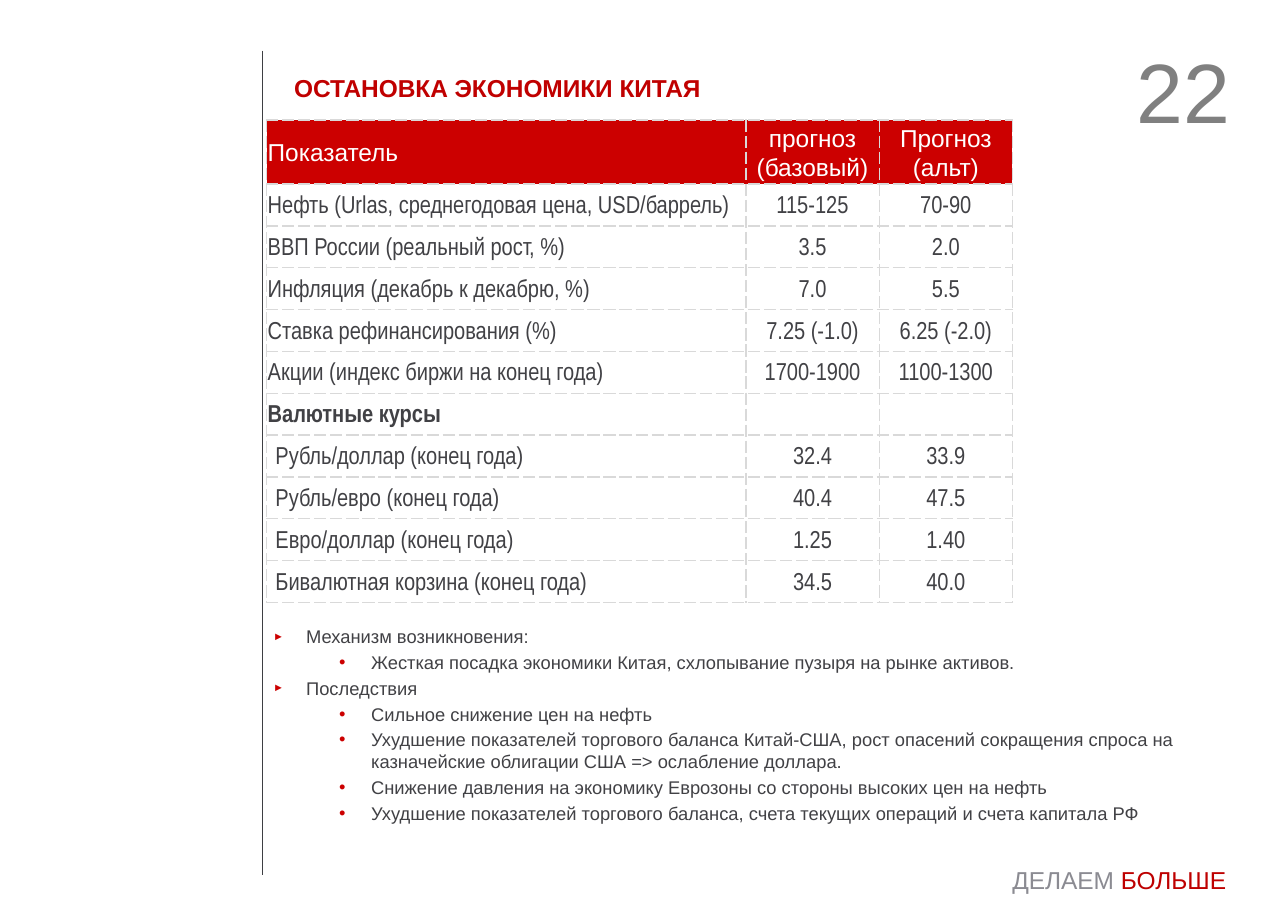
from lxml.etree import SubElement
from pptx import Presentation
from pptx.dml.color import RGBColor
from pptx.enum.shapes import MSO_CONNECTOR
from pptx.enum.text import MSO_ANCHOR, MSO_AUTO_SIZE, PP_ALIGN
from pptx.oxml import parse_xml
from pptx.oxml.ns import nsdecls, qn
from pptx.util import Inches, Pt

WHITE = RGBColor(0xFF, 0xFF, 0xFF)
INK = RGBColor(0x41, 0x41, 0x45)
RULE = RGBColor(0x3E, 0x3F, 0x43)
GREY = RGBColor(0x80, 0x80, 0x80)
MUTED = RGBColor(0x8B, 0x8B, 0x92)
PALE = RGBColor(0xD9, 0xD9, 0xD9)
RED = RGBColor(0xCC, 0x00, 0x00)
DEEP = RGBColor(0xC0, 0x00, 0x00)
BRAND = RGBColor(0xBE, 0x00, 0x00)

GROUP = "Валютные курсы"
HEAD = ("Показатель", "прогноз (базовый)", "Прогноз (альт)")
MACRO = [
    ("Нефть (Urlas, среднегодовая цена, USD/баррель)", "115-125", "70-90"),
    ("ВВП России (реальный рост, %)", "3.5", "2.0"),
    ("Инфляция (декабрь к декабрю, %)", "7.0", "5.5"),
    ("Ставка рефинансирования (%)", "7.25 (-1.0)", "6.25 (-2.0)"),
    ("Акции (индекс биржи на конец года)", "1700-1900", "1100-1300"),
]
RATES = [
    ("Рубль/доллар (конец года)", "32.4", "33.9"),
    ("Рубль/евро (конец года)", "40.4", "47.5"),
    ("Евро/доллар (конец года)", "1.25", "1.40"),
    ("Бивалютная корзина (конец года)", "34.5", "40.0"),
]
NOTES = [
    (0, "Механизм возникновения:"),
    (1, "Жесткая посадка экономики Китая, схлопывание пузыря на рынке активов."),
    (0, "Последствия"),
    (1, "Сильное снижение цен на нефть"),
    (1, "Ухудшение показателей торгового баланса Китай-США, рост опасений "
        "сокращения спроса на казначейские облигации США => ослабление доллара."),
    (1, "Снижение давления на экономику Еврозоны со стороны высоких цен на нефть"),
    (1, "Ухудшение показателей торгового баланса, счета текущих операций и счета капитала РФ"),
]
BULLETS = [("►", 60, 0.3, 0.3), ("•", 100, 0.89, 0.29)]


def grid(*units):
    """Turn grid columns or rows of a tenth of an inch into lengths."""
    return [Inches(unit / 10) for unit in units]


class Page:
    """Hold the style and the current slide."""

    def __init__(self, deck, font="Arial"):
        """Add a title-only slide to the deck."""
        self.slide = deck.slides.add_slide(deck.slide_layouts[5])
        self.font = font

    def style(self, para, size, color, bold=False, font=None):
        """Format every run of a paragraph."""
        for run in para.runs:
            run.font.name = font or self.font
            run.font.size = Pt(size)
            run.font.bold = bold
            run.font.color.rgb = color

    def title(self, text, box):
        """Fill and move the title placeholder."""
        shape = self.slide.shapes.title
        shape.left, shape.top, shape.width, shape.height = grid(*box)
        frame = shape.text_frame
        frame.text = text
        frame.auto_size = MSO_AUTO_SIZE.NONE
        frame.vertical_anchor = MSO_ANCHOR.MIDDLE
        frame.paragraphs[0].alignment = PP_ALIGN.LEFT
        self.style(frame.paragraphs[0], 16, DEEP, True)

    def text(self, text, box, size, color, align=PP_ALIGN.LEFT):
        """Add a wrapped text box and return its frame."""
        frame = self.slide.shapes.add_textbox(*grid(*box)).text_frame
        frame.word_wrap = True
        frame.text = text
        frame.paragraphs[0].alignment = align
        self.style(frame.paragraphs[0], size, color)
        return frame

    def line(self, start, end, color, width):
        """Draw a straight rule without a shadow."""
        rule = self.slide.shapes.add_connector(
            MSO_CONNECTOR.STRAIGHT, *grid(*start, *end))
        rule.line.color.rgb = color
        rule.line.width = Pt(width)
        SubElement(rule._element.spPr, qn("a:effectLst"))

    def bullets(self, items, box):
        """Add a two-level bulleted list."""
        frame = self.text("\n".join(text for _, text in items), box, 12, INK)
        for num, (para, (level, _)) in enumerate(zip(frame.paragraphs, items)):
            mark, size, left, hang = BULLETS[level]
            para.level = level
            props = para._p.get_or_add_pPr()
            props.set("marL", str(Inches(left)))
            props.set("indent", str(-Inches(hang)))
            color = SubElement(props, qn("a:buClr"))
            SubElement(color, qn("a:srgbClr"), val=str(RED))
            SubElement(props, qn("a:buSzPct"), val=str(size * 1000))
            SubElement(props, qn("a:buFont"), typeface=self.font)
            SubElement(props, qn("a:buChar"), char=mark)
            if num:
                para.space_before = Pt(2.4)
            self.style(para, 12, INK)

    def border(self, cell):
        """Give a cell dashed borders on all sides."""
        props = cell._tc.get_or_add_tcPr()
        for spot, side in enumerate("LRTB"):
            props.insert(spot, parse_xml(
                f'<a:ln{side} {nsdecls("a")} w="12700"><a:solidFill>'
                f'<a:srgbClr val="{PALE}"/></a:solidFill>'
                f'<a:prstDash val="dash"/></a:ln{side}>'))

    def cell(self, cell, text, head, col, inset):
        """Fill and format one table cell."""
        cell.margin_left = Inches(inset)
        cell.margin_top = cell.margin_right = Inches(0.01)
        cell.margin_bottom = 0
        cell.vertical_anchor = MSO_ANCHOR.MIDDLE
        cell.fill.solid()
        cell.fill.fore_color.rgb = RED if head else WHITE
        self.border(cell)
        cell.text = text
        para = cell.text_frame.paragraphs[0]
        para.line_spacing = 1.07 if head else 1.15
        para.alignment = PP_ALIGN.CENTER if col else PP_ALIGN.LEFT
        if head:
            self.style(para, 16, WHITE)
        else:
            self.style(para, 16, INK, text == GROUP, "Arial Narrow")

    def table(self, rows, box, widths, heights):
        """Add the forecast table."""
        table = self.slide.shapes.add_table(
            len(rows), len(widths), *grid(*box)).table
        table.first_row = table.horz_banding = False
        for col, width in zip(table.columns, grid(*widths)):
            col.width = width
        for row, height in zip(table.rows, grid(*heights)):
            row.height = height
        for num, row in enumerate(rows):
            for col, text in enumerate(row):
                inset = 0.08 if row in RATES and not col else 0.01
                self.cell(table.cell(num, col), text, num == 0, col, inset)


def main():
    """Build and save the slide."""
    deck = Presentation()
    deck.slide_width, deck.slide_height = grid(116.9, 82.7)
    page = Page(deck)
    page.line((23.8, 4.6), (23.8, 79.4), RULE, 0.75)
    slogan = page.text("ДЕЛАЕМ", (90.9, 78, 25.5, 3.7), 16, MUTED).paragraphs[0]
    slogan.add_run().text = " БОЛЬШЕ"
    page.style(slogan, 16, BRAND)
    slogan.runs[0].font.color.rgb = MUTED
    page.title("ОСТАНОВКА ЭКОНОМИКИ КИТАЯ", (25.7, 6.1, 76, 3.7))
    page.text("22", (92.9, 3.1, 19.7, 8.1), 55, GREY, PP_ALIGN.RIGHT)
    rows = [HEAD, *MACRO, (GROUP, "", ""), *RATES]
    heights = [5.7] + [3.8] * (len(rows) - 1)
    page.table(rows, (24.2, 10.9, 67.7, sum(heights)), (43.5, 12.1, 12.1), heights)
    page.bullets(NOTES, (23.8, 56.3, 93.1, 26.2))
    deck.save("out.pptx")


if __name__ == "__main__":
    main()
